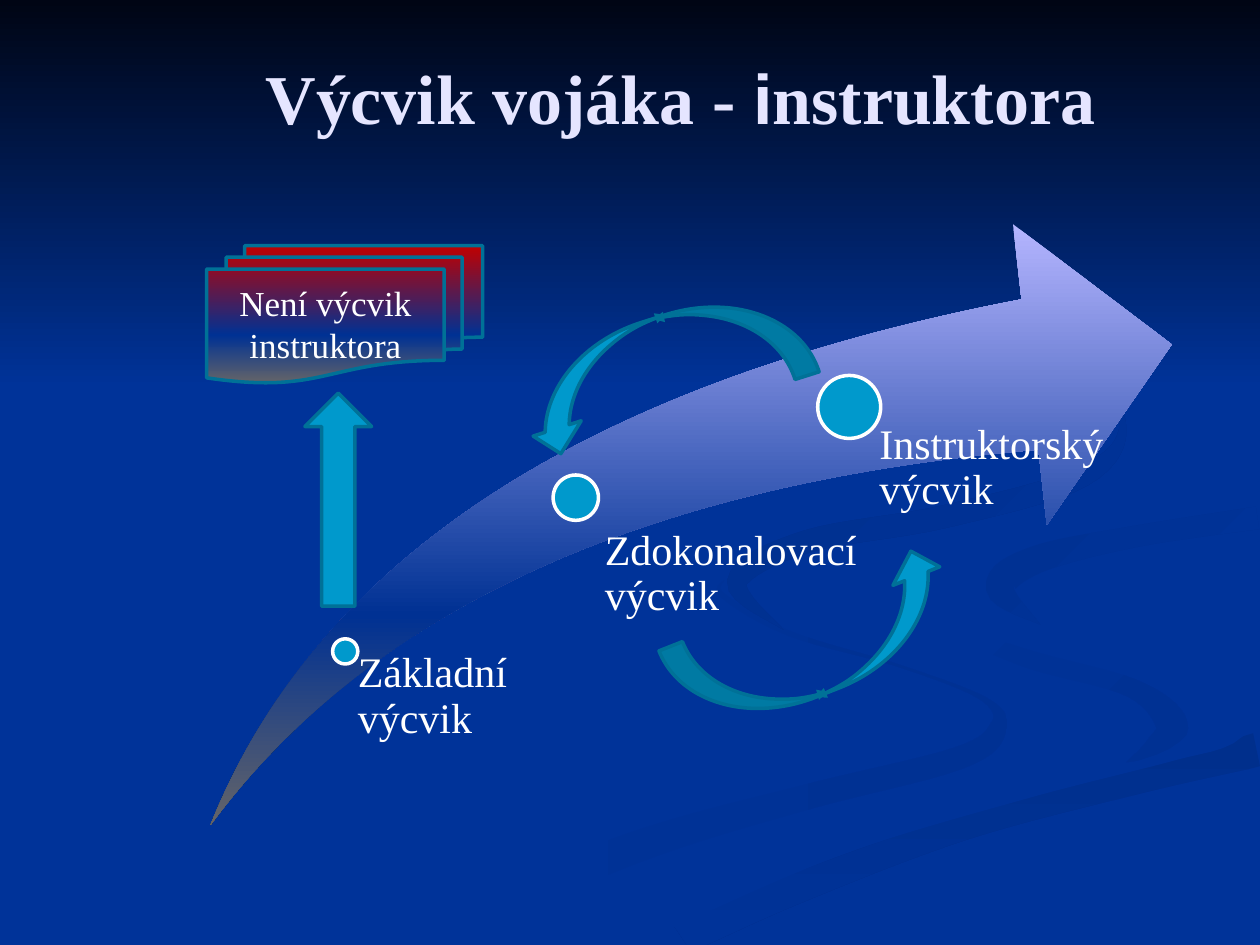
import copy
import math

import pptx
import pptx.dml.color
import pptx.enum.shapes
import pptx.enum.text
import pptx.oxml.ns
import pptx.util

Inches = pptx.util.Inches
Pt = pptx.util.Pt
Color = pptx.dml.color.RGBColor
Kind = pptx.enum.shapes.MSO_SHAPE
Align = pptx.enum.text.PP_ALIGN
Anchor = pptx.enum.text.MSO_ANCHOR
qn = pptx.oxml.ns.qn

WIDTH, HEIGHT = 10, 7.5
STEPS = 8  # points drawn between two knots of a ribbon

NAVY = Color(0x00, 0x33, 0x99)
DUSK = Color(0x00, 0x31, 0x93)
DEEP = Color(0x00, 0x2F, 0x8C)
NIGHT = Color(0x00, 0x05, 0x14)
PALE = Color(0xE5, 0xE5, 0xFF)
LILAC = Color(0xB5, 0xB5, 0xFF)
GREY = Color(0x64, 0x64, 0x68)
RED = Color(0xC0, 0x00, 0x00)
CYAN = Color(0x00, 0x99, 0xCC)
TEAL = Color(0x00, 0x71, 0x97)
WHITE = Color(0xFF, 0xFF, 0xFF)
SERIF = "Times New Roman"

# Each ribbon: knots of its middle line (x, y, breadth), colours, angle
RIBBONS = {
    "left bend": ([(5.75, 4.6, 0), (5.74, 4.73, 0.04), (6.27, 5.03, 0.04),
                   (7.15, 5.29, 0.02), (7.81, 5.55, 0.04), (7.92, 5.78, 0.14),
                   (7.6, 6.02, 0.18), (6.35, 6.34, 0.2), (5, 6.74, 0.25),
                   (3.3, 7.45, 0.3)], [NAVY, DUSK], 0),
    "right bend": ([(7.24, 4.64, 0), (7.42, 4.92, 0.06), (8.13, 5.22, 0.14),
                    (8.98, 5.46, 0.15), (9.3, 5.75, 0.25), (9.16, 5.93, 0.16),
                    (8.94, 6.05, 0)], [NAVY, DUSK], 45),
    "low sweep": ([(5.4, 7.46, 0.25), (6.3, 7.06, 0.24), (7.64, 6.57, 0.2),
                   (9.03, 6.2, 0.2), (9.98, 5.95, 0.27)], [DEEP, NAVY], 90),
    "plain bend": ([(9.99, 3.94, 0.15), (8.3, 4.22, 0.15), (7.53, 4.62, 0.55),
                    (8.3, 5.08, 0.2), (9.3, 5.37, 0.2), (9.7, 5.65, 0.5),
                    (9.3, 5.99, 0.1), (8.1, 6.3, 0.1), (6.6, 6.75, 0.12),
                    (5, 7.45, 0.13)], [NAVY], 0),
    "side hook": ([(9.98, 4.11, 0.18), (9, 4.26, 0.17), (8.23, 4.44, 0.22),
                   (7.94, 4.67, 0.23), (8.26, 4.96, 0)], [DUSK, NAVY], 45),
    "top bend": ([(7.62, 2.33, 0), (8.5, 2.82, 0.05), (8.91, 3.35, 0.05),
                  (8.6, 3.78, 0.16), (7.5, 4.1, 0.18), (6.4, 4.3, 0.18),
                  (5.85, 4.62, 0.16), (6.22, 5, 0)], [DEEP, NAVY], 45),
}

# Each stage: text, dot left, dot top, dot size, label box, label inset
STAGES = [
    ("Základní výcvik", 2.64, 5.07, 0.2, (2.73, 5.17, 1.78, 1.38), 0.11),
    ("Zdokonalovací výcvik", 4.39, 3.77, 0.36, (4.61, 4.2, 2.68, 2.59), 0.19),
    ("Instruktorský výcvik", 6.49, 2.98, 0.5, (6.72, 3.36, 2.34, 3.31), 0.26),
]


def style(item, form):
    for name, value in form.items():
        setattr(item, name, value)


def paint(shape, colors, angle=90):
    """Fill with one colour, or with a gradient at a clockwise angle."""
    fill = shape.fill
    if len(colors) == 1:
        fill.solid()
        fill.fore_color.rgb = colors[0]
        return
    places = [0, 0.65, 1] if len(colors) == 3 else [0, 1]
    fill.gradient()
    fill.gradient_angle = -angle % 360
    nodes = shape._element.spPr.find(".//" + qn("a:gsLst"))
    for _ in colors[2:]:
        nodes.append(copy.deepcopy(nodes[-1]))
    for stop, place, color in zip(fill.gradient_stops, places, colors):
        stop.position = place
        stop.color.rgb = color


def edge(shape, color=None):
    if color is None:
        shape.line.fill.background()
    else:
        shape.line.color.rgb = color
        shape.line.width = Pt(2)
    shape.shadow.inherit = False


def smooth(knots):
    """Run a Catmull-Rom curve through the knots."""
    ends = [knots[0], *knots, knots[-1]]
    dots = []
    for a, b, c, d in zip(ends, ends[1:], ends[2:], ends[3:]):
        for step in range(STEPS):
            t = step / STEPS
            dots.append([q + t * (r - p) / 2
                         + t**2 * (p - 2.5 * q + 2 * r - s / 2)
                         + t**3 * (3 * (q - r) + s - p) / 2
                         for p, q, r, s in zip(a, b, c, d)])
    return dots + [knots[-1]]


def sides(dots):
    """Set off both edges of a band, half its breadth from the middle."""
    left, right = [], []
    for i, (x, y, broad) in enumerate(dots):
        back, ahead = dots[max(i - 1, 0)], dots[min(i + 1, len(dots) - 1)]
        dx, dy = ahead[0] - back[0], ahead[1] - back[1]
        half = max(broad, 0) / 2 / math.hypot(dx, dy)
        for edge_dots, sign in ((left, 1), (right, -1)):
            edge_dots.append((min(x - sign * dy * half, WIDTH),
                              min(y + sign * dx * half, HEIGHT)))
    return left + right[::-1]


def ribbon(slide, knots, colors, angle):
    dots = [tuple(map(Inches, dot)) for dot in sides(smooth(knots))]
    pen = slide.shapes.build_freeform(*dots[0])
    pen.add_line_segments(dots[1:], close=True)
    shape = pen.convert_to_shape()
    paint(shape, colors, angle)
    edge(shape)


def block(slide, kind, box, colors, line=None, turn=0):
    shape = slide.shapes.add_shape(kind, *map(Inches, box))
    shape.rotation = turn
    paint(shape, colors)
    edge(shape, line)
    return shape


def write(frame, runs, size, color, para, **form):
    """Put (text, font name) runs in one paragraph."""
    style(frame, {"word_wrap": True, **form})
    line = frame.paragraphs[0]
    style(line, para)
    for text, face in runs:
        run = line.add_run()
        run.text = text
        style(run.font, {"name": face, "size": Pt(size)})
        run.font.color.rgb = color
    return line


def title(slide):
    box = slide.shapes.add_textbox(*map(Inches, (1.3, 0.36, 8.2, 1)))
    runs = [("Výcvik vojáka - ", SERIF), ("i", "Arial"), ("nstruktora", SERIF)]
    line = write(box.text_frame, runs, 40, PALE, {"alignment": Align.CENTER},
                 vertical_anchor=Anchor.TOP, margin_top=Inches(0.07))
    for run in line.runs:
        run.font.bold = True


def stage(slide, text, left, top, size, box, inset):
    block(slide, Kind.OVAL, (left, top, size, size), [CYAN], WHITE)
    label = slide.shapes.add_textbox(*map(Inches, box))
    write(label.text_frame, [(text, SERIF)], 24, WHITE, {"line_spacing": 0.9},
          margin_left=Inches(inset), margin_top=0, margin_right=0,
          margin_bottom=0)


def bend(slide, left, top, turn):
    shape = block(slide, Kind.CURVED_RIGHT_ARROW, (left, top, 0.8, 2.35),
                  [CYAN], TEAL, turn)
    line = shape._element.spPr.find(qn("a:ln"))
    for tag in ("a:headEnd", "a:tailEnd"):
        line.append(line.makeelement(qn(tag), {"type": "triangle"}))


def main():
    deck = pptx.Presentation()
    style(deck, {"slide_width": Inches(WIDTH), "slide_height": Inches(HEIGHT)})
    slide = deck.slides.add_slide(deck.slide_layouts[6])
    paint(slide.background, [NAVY])
    for knots, colors, angle in RIBBONS.values():
        ribbon(slide, knots, colors, angle)
    block(slide, Kind.RECTANGLE, (0, 0, WIDTH, 3.08), [NIGHT, NAVY])
    title(slide)
    swoosh = block(slide, Kind.SWOOSH_ARROW, (1.67, 1.78, 7.63, 4.77),
                   [LILAC, DUSK, GREY])
    for i in range(2):
        swoosh.adjustments[i] = 0.25
    for row in STAGES:
        stage(slide, *row)
    bend(slide, 4.86, 1.75, 72.4)
    bend(slide, 6.07, 3.93, 248.4)
    note = block(slide, Kind.FLOWCHART_MULTIDOCUMENT, (1.64, 1.95, 2.19, 1.09),
                 [RED, DUSK, GREY], TEAL)
    write(note.text_frame, [("Není výcvik instruktora", SERIF)], 20, WHITE,
          {"alignment": Align.CENTER}, vertical_anchor=Anchor.MIDDLE)
    block(slide, Kind.UP_ARROW, (2.42, 3.12, 0.53, 1.69), [CYAN], TEAL)
    deck.save("out.pptx")


if __name__ == "__main__":
    main()
